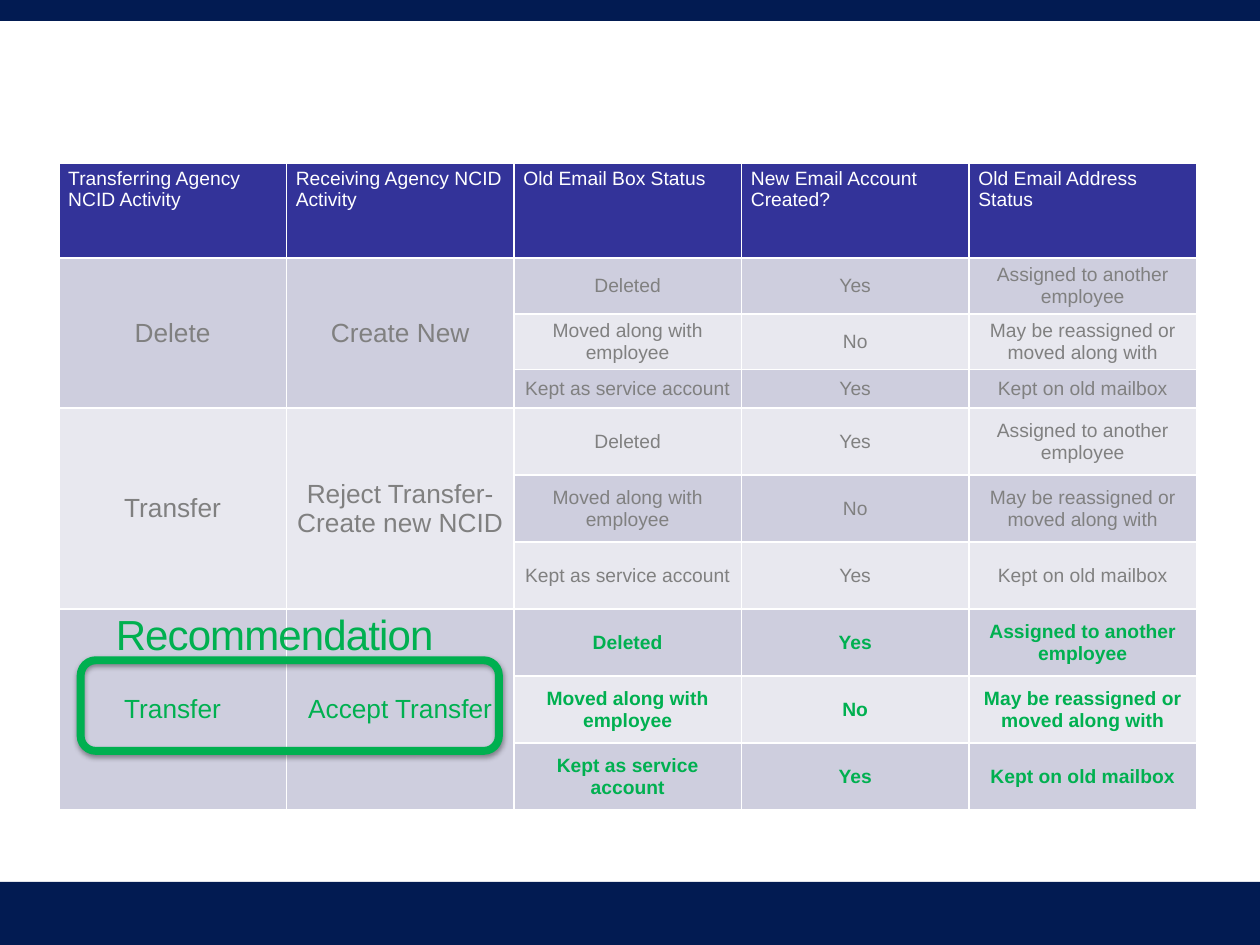
from lxml import etree
from pptx import Presentation
from pptx.dml.color import RGBColor
from pptx.enum.shapes import MSO_SHAPE
from pptx.enum.text import MSO_ANCHOR, PP_ALIGN
from pptx.oxml.ns import qn
from pptx.util import Pt

RECTANGLE = MSO_SHAPE.RECTANGLE
ROUNDED = MSO_SHAPE.ROUNDED_RECTANGLE
LEFT, CENTER = PP_ALIGN.LEFT, PP_ALIGN.CENTER
TOP, MIDDLE = MSO_ANCHOR.TOP, MSO_ANCHOR.MIDDLE

NAVY = RGBColor(0x02, 0x1B, 0x52)
INDIGO = RGBColor(0x33, 0x33, 0x99)
WHITE = RGBColor(0xFF, 0xFF, 0xFF)
GRAY = RGBColor(0x80, 0x80, 0x80)
GREEN = RGBColor(0x00, 0xB0, 0x50)
BANDS = (RGBColor(0xCE, 0xCE, 0xDE), RGBColor(0xE8, 0xE8, 0xEF))

FONT = "Arial"
PAGE_WIDTH, PAGE_HEIGHT = 720, 540
COLUMN_WIDTH = 130.05
ROW_HEIGHTS = [54.4, 31.9, 31.9, 22] + [38.3] * 6

HEADERS = (
    "Transferring Agency NCID Activity",
    "Receiving Agency NCID Activity",
    "Old Email Box Status",
    "New Email Account Created?",
    "Old Email Address Status",
)
ACTIVITIES = (
    ("Delete", "Create New"),
    ("Transfer", "Reject Transfer-Create new NCID"),
    ("Transfer", "Accept Transfer"),
)
OUTCOMES = (
    ("Deleted", "Yes", "Assigned to another employee"),
    ("Moved along with employee", "No", "May be reassigned or moved along with"),
    ("Kept as service account", "Yes", "Kept on old mailbox"),
)


def add_text(para, text, size, color, bold=False):
    span = para.add_run()
    span.text = text
    span.font.name = FONT
    span.font.size = Pt(size)
    span.font.color.rgb = color
    span.font.bold = bold
    return span


def add_bar(page, top, height):
    bar = page.shapes.add_shape(RECTANGLE, 0, Pt(top), Pt(PAGE_WIDTH), Pt(height))
    bar.shadow.inherit = False
    bar.fill.solid()
    bar.fill.fore_color.rgb = NAVY
    bar.line.fill.background()


def fill_cell(cell, text, size, color, fill, bold=False, align=CENTER, anchor=MIDDLE):
    cell.fill.solid()
    cell.fill.fore_color.rgb = fill
    cell.margin_left = cell.margin_right = Pt(5.4)
    cell.margin_top = cell.margin_bottom = Pt(2.9)
    cell.vertical_anchor = anchor
    para = cell.text_frame.paragraphs[0]
    para.alignment = align
    add_text(para, text, size, color, bold)


def add_process_table(page):
    """Each activity pair spans the rows of its three possible outcomes."""
    table = page.shapes.add_table(
        len(ROW_HEIGHTS), len(HEADERS), Pt(33.6), Pt(93),
        Pt(COLUMN_WIDTH * len(HEADERS)), Pt(sum(ROW_HEIGHTS)),
    ).table
    for column in table.columns:
        column.width = Pt(COLUMN_WIDTH)
    for row, height in zip(table.rows, ROW_HEIGHTS):
        row.height = Pt(height)

    for column, header in enumerate(HEADERS):
        fill_cell(table.cell(0, column), header, 11, WHITE, INDIGO, align=LEFT, anchor=TOP)

    for group, activities in enumerate(ACTIVITIES):
        recommended = group == len(ACTIVITIES) - 1
        color = GREEN if recommended else GRAY
        first = 1 + group * len(OUTCOMES)
        last = first + len(OUTCOMES) - 1
        for column, activity in enumerate(activities):
            cell = table.cell(first, column)
            cell.merge(table.cell(last, column))
            fill_cell(cell, activity, 15, color, BANDS[group % 2])
        for row, outcome in enumerate(OUTCOMES, first):
            for column, text in enumerate(outcome, len(activities)):
                fill_cell(table.cell(row, column), text, 11, color,
                          BANDS[(row - 1) % 2], bold=recommended)


def add_soft_shadow(shape):
    shape.shadow.inherit = False
    effects = shape._element.spPr.find(qn("a:effectLst"))
    shadow = etree.SubElement(effects, qn("a:outerShdw"), blurRad=str(Pt(3.1)),
                              dist=str(Pt(1.6)), dir="5400000", rotWithShape="0")
    black = etree.SubElement(shadow, qn("a:srgbClr"), val="000000")
    etree.SubElement(black, qn("a:alpha"), val="38000")


def add_highlight(page):
    frame = page.shapes.add_shape(ROUNDED, Pt(46.1), Pt(377.3), Pt(239), Pt(51.8))
    frame.fill.background()
    frame.line.color.rgb = GREEN
    frame.line.width = Pt(4.5)
    add_soft_shadow(frame)


def add_label(page):
    box = page.shapes.add_textbox(Pt(66.2), Pt(347.8), Pt(218.9), Pt(28.8))
    text_frame = box.text_frame
    text_frame.word_wrap = True
    text_frame.margin_left = text_frame.margin_right = 0
    text_frame.margin_top = text_frame.margin_bottom = 0
    span = add_text(text_frame.paragraphs[0], "Recommendation", 24, GREEN)
    span.font._element.set("spc", "-50")


def main():
    deck = Presentation()
    deck.slide_width, deck.slide_height = Pt(PAGE_WIDTH), Pt(PAGE_HEIGHT)
    page = deck.slides.add_slide(deck.slide_layouts[6])
    add_bar(page, 0, 12)
    add_bar(page, 504, 36)
    add_process_table(page)
    add_highlight(page)
    add_label(page)
    deck.save("out.pptx")


if __name__ == "__main__":
    main()
